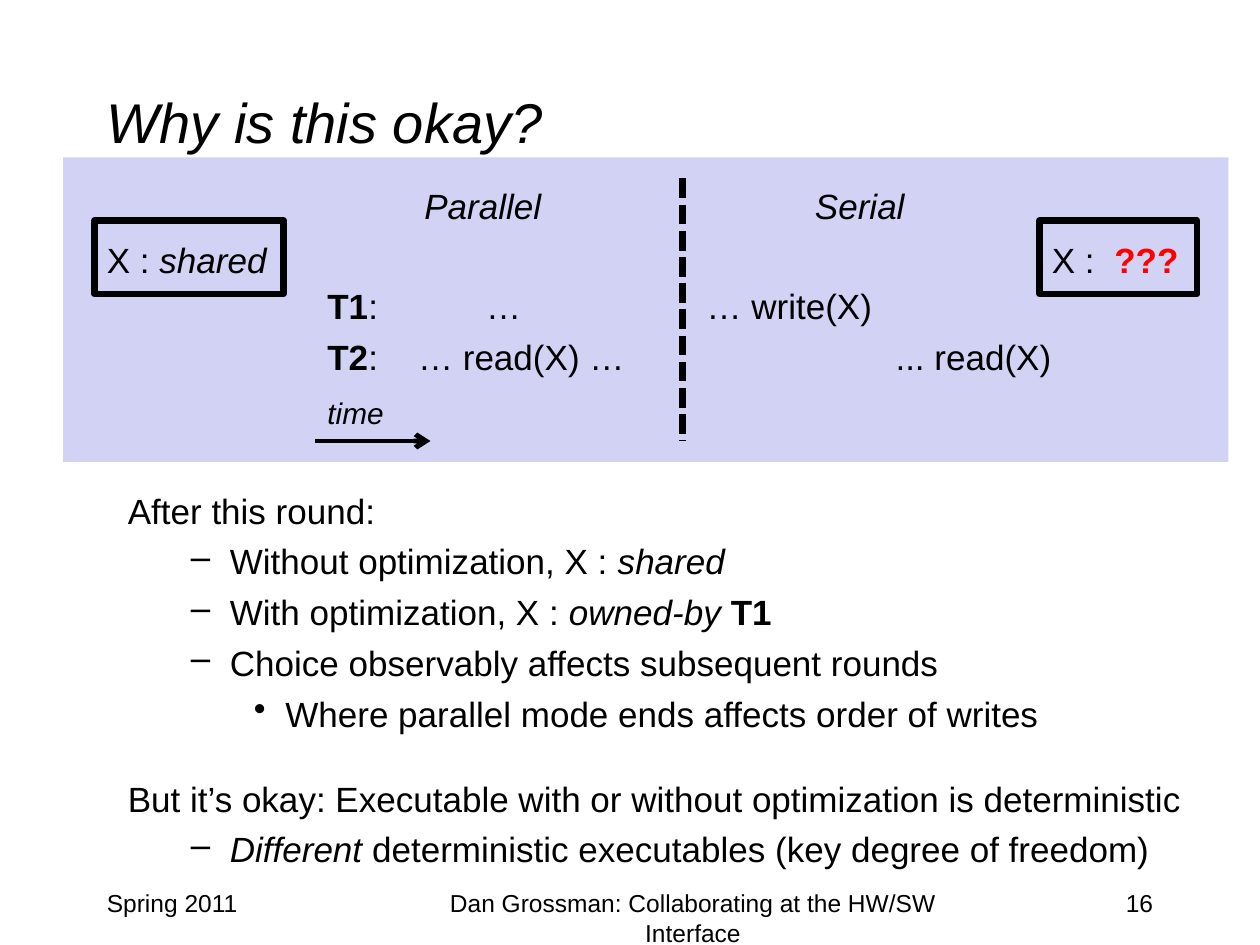
from lxml.etree import SubElement
from pptx import Presentation
from pptx.dml.color import RGBColor
from pptx.enum.dml import MSO_LINE_DASH_STYLE as DASH
from pptx.enum.shapes import MSO_CONNECTOR, MSO_SHAPE
from pptx.enum.text import MSO_ANCHOR as ANCHOR, PP_ALIGN as ALIGN
from pptx.oxml.ns import qn
from pptx.util import Inches, Pt

BLACK = RGBColor(0x00, 0x00, 0x00)
RED = RGBColor(0xFF, 0x00, 0x00)
LAVENDER = RGBColor(0xD2, 0xD2, 0xF4)

prs = Presentation()
prs.slide_width, prs.slide_height = Inches(10), Inches(7.5)
s = prs.slides.add_slide(prs.slide_layouts[6])
COL = prs.slide_width / 120
ROW = prs.slide_height / 90


def grid(x, y, w, h):
    return int(x * COL), int(y * ROW), int(w * COL), int(h * ROW)


def add_par(tf, runs, size=20, before=0, align=ALIGN.LEFT, bullet=None,
            margin=0, indent=0, tabs=()):
    p = tf.paragraphs[0] if not tf.paragraphs[0].runs else tf.add_paragraph()
    p.alignment, p.space_before = align, Pt(before)
    pPr = p._p.get_or_add_pPr()
    if bullet:
        pPr.set("marL", str(Inches(margin)))
        pPr.set("indent", str(Inches(indent)))
        SubElement(pPr, qn("a:buChar"), char=bullet)
    if tabs:
        tab_list = SubElement(pPr, qn("a:tabLst"))
        for tab in tabs:
            SubElement(tab_list, qn("a:tab"), pos=str(Inches(tab)), algn="l")
    for text, style in runs:
        r = p.add_run()
        r.text = text
        r.font.name, r.font.size = "Arial", Pt(size)
        r.font.bold, r.font.italic = "b" in style, "i" in style
        r.font.color.rgb = RED if "r" in style else BLACK


panel = s.shapes.add_shape(MSO_SHAPE.RECTANGLE, *grid(6, 15, 111, 29))
panel.shadow.inherit = False
panel.fill.solid()
panel.fill.fore_color.rgb = LAVENDER
panel.line.fill.background()

labels = [
    ((9, 4, 102, 15), "Why is this okay?", "i", 32, ALIGN.LEFT, ANCHOR.MIDDLE),
    ((9, 84, 25, 6), "Spring 2011", "", 14, ALIGN.LEFT, ANCHOR.TOP),
    ((86, 84, 25, 6), "16", "", 14, ALIGN.RIGHT, ANCHOR.TOP),
    ((38, 84, 56, 6), "Dan Grossman: Collaborating at the HW/SW Interface", "", 14,
     ALIGN.CENTER, ANCHOR.TOP),
    ((30, 37, 8, 4.7), "time", "i", 17, ALIGN.LEFT, ANCHOR.TOP),
]
for place, text, style, size, align, anchor in labels:
    tf = s.shapes.add_textbox(*grid(*place)).text_frame
    tf.word_wrap, tf.vertical_anchor = True, anchor
    add_par(tf, [(text, style)], size=size, align=align)

states = [
    ((9, 21, 18, 7), [("X : ", ""), ("shared", "i")]),
    ((99, 21, 15, 7), [("X :  ", ""), ("???", "br")]),
]
for place, runs in states:
    box = s.shapes.add_shape(MSO_SHAPE.RECTANGLE, *grid(*place))
    box.shadow.inherit = False
    box.fill.background()
    box.line.color.rgb, box.line.width = BLACK, Pt(3.75)
    tf = box.text_frame
    tf.word_wrap, tf.vertical_anchor = True, ANCHOR.TOP
    tf.margin_top = Inches(0.14)
    add_par(tf, runs)

schedule = [
    ([("\tParallel\tSerial", "i")], 0, (0.77, 3.87)),
    ([("T1", "b"), (":\t…\t… write(X)", "")], 33, (1.26, 3.01)),
    ([("T2", "b"), (":\t… read(X) …\t... read(X)", "")], 5, (0.72, 4.51)),
]
tf = s.shapes.add_textbox(*grid(30, 17, 72, 22)).text_frame
tf.word_wrap = True
for runs, before, tabs in schedule:
    add_par(tf, runs, before=before, tabs=tabs)

TOP = {}
DASHED = {"bullet": "–", "margin": 0.81, "indent": -0.31}
DOTTED = {"bullet": "•", "margin": 1.25, "indent": -0.25}
outline = [
    (TOP, 0, [("After this round:", "")]),
    (DASHED, 5, [("Without optimization, X : ", ""), ("shared", "i")]),
    (DASHED, 5, [("With optimization, X : ", ""), ("owned-by ", "i"), ("T1", "b")]),
    (DASHED, 5, [("Choice observably affects subsequent rounds", "")]),
    (DOTTED, 5, [("Where parallel mode ends affects order of writes", "")]),
    (TOP, 24.5, [("But it’s okay: Executable with or without optimization is deterministic", "")]),
    (DASHED, 5, [("Different", "i"), (" deterministic executables (key degree of freedom)", "")]),
]
tf = s.shapes.add_textbox(*grid(11, 46, 103, 38)).text_frame
tf.word_wrap = True
for level, before, runs in outline:
    add_par(tf, runs, before=before, **level)

lines = [
    ((65, 17, 65, 42), 3.75, DASH.SQUARE_DOT, False),
    ((30, 42, 41, 42), 2.75, DASH.SOLID, True),
]
for ends, width, dash, arrow in lines:
    line = s.shapes.add_connector(MSO_CONNECTOR.STRAIGHT, *grid(*ends))
    line.line.color.rgb, line.line.width = BLACK, Pt(width)
    line.line.dash_style = dash
    if arrow:
        SubElement(line.line._get_or_add_ln(), qn("a:tailEnd"), type="arrow")
    SubElement(line._element.spPr, qn("a:effectLst"))

prs.save("out.pptx")
